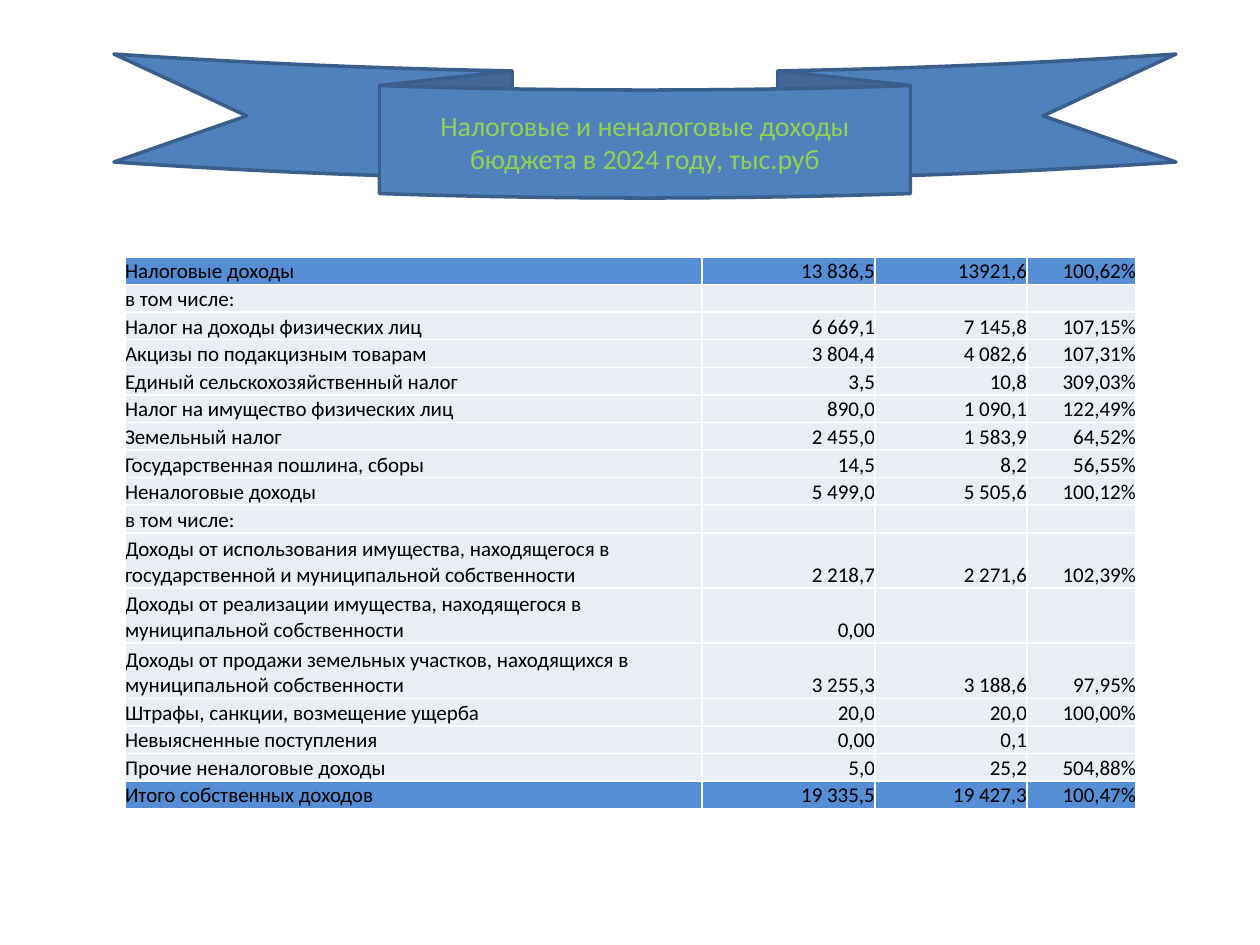
import pptx
import pptx.dml.color
import pptx.enum.shapes
import pptx.enum.text
import pptx.oxml.ns
import pptx.util
from lxml import etree

EMU_PER_PX = 914400 // 126
FONT = "Calibri"
TABLE_FONT_SIZE = 12
COLORS = {
    "ribbon": "4F81BD",
    "ribbon_line": "3A5F8C",
    "title": "92D050",
    "total_row": "558ED5",
    "detail_row": "E9EDF4",
    "text": "000000",
    "border": "FFFFFF",
}
COLUMN_WIDTHS = [577, 173, 152, 109]
TABLE_HEIGHT = 552
TWO_LINE_LABEL = 60  # labels with more characters wrap to a second line

REVENUES = [
    ("Налоговые доходы", "13 836,5", "13921,6", "100,62%"),
    ("в том числе:", "", "", ""),
    ("Налог на доходы физических лиц", "6 669,1", "7 145,8", "107,15%"),
    ("Акцизы по подакцизным товарам", "3 804,4", "4 082,6", "107,31%"),
    ("Единый сельскохозяйственный налог", "3,5", "10,8", "309,03%"),
    ("Налог на имущество физических лиц", "890,0", "1 090,1", "122,49%"),
    ("Земельный налог", "2 455,0", "1 583,9", "64,52%"),
    ("Государственная пошлина, сборы", "14,5", "8,2", "56,55%"),
    ("Неналоговые доходы", "5 499,0", "5 505,6", "100,12%"),
    ("в том числе:", "", "", ""),
    ("Доходы от использования имущества, находящегося в государственной "
     "и муниципальной собственности", "2 218,7", "2 271,6", "102,39%"),
    ("Доходы от реализации имущества, находящегося в муниципальной собственности",
     "0,00", "", ""),
    ("Доходы от продажи земельных участков, находящихся в муниципальной собственности",
     "3 255,3", "3 188,6", "97,95%"),
    ("Штрафы, санкции, возмещение ущерба", "20,0", "20,0", "100,00%"),
    ("Невыясненные поступления", "0,00", "0,1", ""),
    ("Прочие неналоговые доходы", "5,0", "25,2", "504,88%"),
    ("Итого собственных доходов", "19 335,5", "19 427,3", "100,47%"),
]


def px(length):
    return pptx.util.Emu(length * EMU_PER_PX)


def rgb(name):
    return pptx.dml.color.RGBColor.from_string(COLORS[name])


def write_text(frame, text, size, color, align):
    """Fill the first paragraph; an empty one still keeps its font size."""
    paragraph = frame.paragraphs[0]
    paragraph.alignment = getattr(pptx.enum.text.PP_ALIGN, align)
    if not text:
        etree.SubElement(paragraph._p, pptx.oxml.ns.qn("a:endParaRPr"), sz=str(size * 100))
        return
    run = paragraph.add_run()
    run.text = text
    run.font.name = FONT
    run.font.size = pptx.util.Pt(size)
    run.font.color.rgb = rgb(color)


def add_title_ribbon(slide, text, left, top, width, height):
    ribbon = slide.shapes.add_shape(
        pptx.enum.shapes.MSO_SHAPE.CURVED_DOWN_RIBBON,
        px(left), px(top), px(width), px(height))
    ribbon.shadow.inherit = False
    ribbon.fill.solid()
    ribbon.fill.fore_color.rgb = rgb("ribbon")
    ribbon.line.color.rgb = rgb("ribbon_line")
    ribbon.line.width = pptx.util.Pt(2)
    ribbon.text_frame.word_wrap = True
    ribbon.text_frame.vertical_anchor = pptx.enum.text.MSO_ANCHOR.MIDDLE
    write_text(ribbon.text_frame, text, size=16, color="title", align="CENTER")


def add_borders(cell):
    properties = cell._tc.get_or_add_tcPr()
    qn = pptx.oxml.ns.qn
    for side in ("lnL", "lnR", "lnT", "lnB"):
        line = etree.SubElement(properties, qn(f"a:{side}"), w=str(pptx.util.Pt(1)))
        fill = etree.SubElement(line, qn("a:solidFill"))
        etree.SubElement(fill, qn("a:srgbClr"), val=COLORS["border"])


def format_cell(cell, text, fill, align):
    cell.margin_left = cell.margin_right = cell.margin_top = cell.margin_bottom = 0
    cell.vertical_anchor = pptx.enum.text.MSO_ANCHOR.BOTTOM
    add_borders(cell)
    cell.fill.solid()
    cell.fill.fore_color.rgb = rgb(fill)
    write_text(cell.text_frame, text, size=TABLE_FONT_SIZE, color="text", align=align)


def add_revenue_table(slide, left, top):
    revenue_table = slide.shapes.add_table(
        len(REVENUES), len(COLUMN_WIDTHS),
        px(left), px(top), px(sum(COLUMN_WIDTHS)), px(TABLE_HEIGHT)).table
    revenue_table.first_row = False
    revenue_table.horz_banding = False
    for column, width in zip(revenue_table.columns, COLUMN_WIDTHS):
        column.width = px(width)

    line_counts = [2 if len(label) > TWO_LINE_LABEL else 1 for label, *_ in REVENUES]
    line_height = px(TABLE_HEIGHT) // sum(line_counts)
    for row_index, values in enumerate(REVENUES):
        revenue_table.rows[row_index].height = line_height * line_counts[row_index]
        is_total = row_index in (0, len(REVENUES) - 1)
        for column_index, value in enumerate(values):
            format_cell(revenue_table.cell(row_index, column_index), value,
                        fill="total_row" if is_total else "detail_row",
                        align="RIGHT" if column_index else "LEFT")


def main():
    presentation = pptx.Presentation()
    presentation.slide_width = px(1260)
    presentation.slide_height = px(945)
    slide = presentation.slides.add_slide(presentation.slide_layouts[6])
    add_revenue_table(slide, left=125, top=257)
    add_title_ribbon(slide, "Налоговые и неналоговые доходы бюджета в 2024 году, тыс.руб",
                     left=114, top=54, width=1062, height=144)
    presentation.save("out.pptx")


if __name__ == "__main__":
    main()
